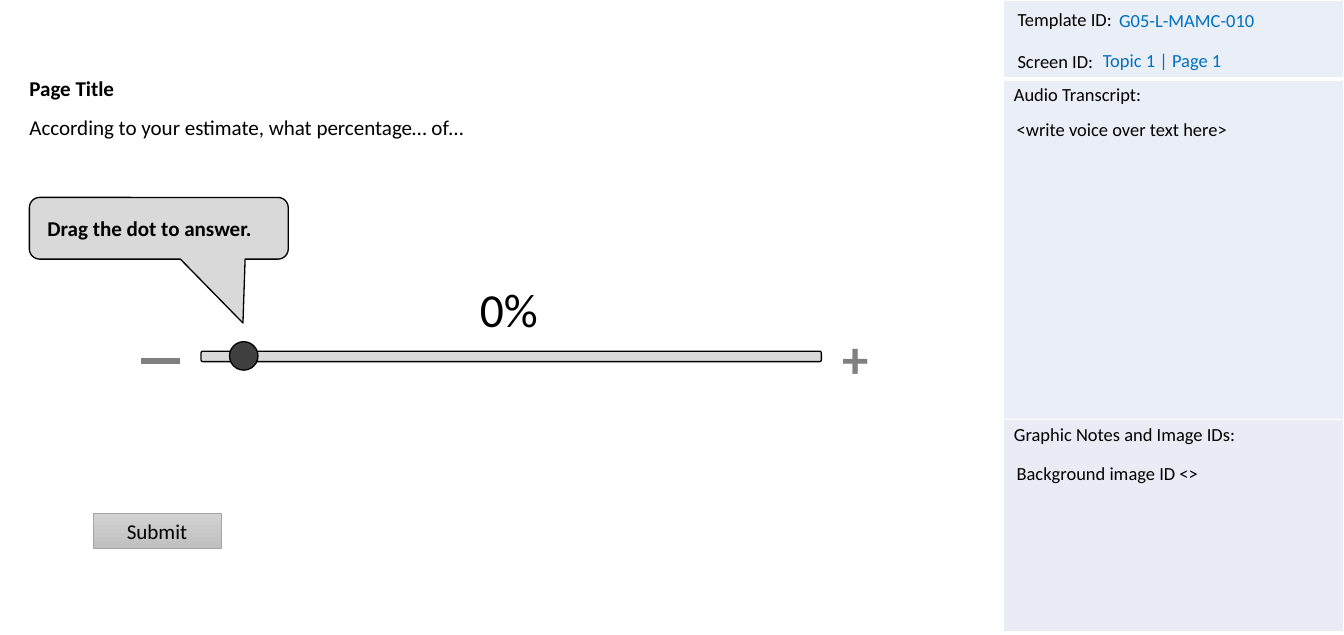
from dataclasses import dataclass

from lxml.etree import SubElement
from pptx import Presentation
from pptx.dml.color import RGBColor
from pptx.enum.shapes import MSO_CONNECTOR, MSO_SHAPE
from pptx.enum.text import MSO_ANCHOR, MSO_AUTO_SIZE, PP_ALIGN
from pptx.oxml.ns import qn
from pptx.util import Inches, Pt


@dataclass(frozen=True)
class Theme:
    """Hold the colours, type sizes and font of the slide."""
    font: str = "Calibri"
    small: int = 14
    base: int = 16
    value: int = 36
    sign: int = 40
    ink: str = "000000"
    link: str = "0070C0"
    grey: str = "808080"
    dot: str = "404040"
    pale: str = "D9D9D9"
    edge: str = "A5A5A5"
    white: str = "FFFFFF"
    panel: tuple = ("EAEFF7", "EAEFF7", "E9EBF5")
    button: tuple = ("D2D2D2", "C0C0C0")


THEME = Theme()


def rgb(code):
    """Turn a hex code into a colour."""
    return RGBColor.from_string(code)


def place(shape, box):
    """Move and size a shape to a box in inches."""
    shape.left, shape.top, shape.width, shape.height = map(Inches, box)


def pad(item, left, top, right, bottom):
    """Set the inner margins of a text frame or a cell."""
    item.margin_left, item.margin_top = Inches(left), Inches(top)
    item.margin_right, item.margin_bottom = Inches(right), Inches(bottom)


def write(frame, text, size, color=THEME.ink, bold=False, align=PP_ALIGN.LEFT):
    """Fill a text frame with one line and format it."""
    frame.text = text
    line = frame.paragraphs[0]
    line.alignment = align
    line.space_before = Pt(0)
    for run in line.runs:
        run.font.name = THEME.font
        run.font.size = Pt(size)
        run.font.bold = bold
        run.font.color.rgb = rgb(color)


def add_label(slide, text, box, size=THEME.small, color=THEME.ink, bold=False, flush=False):
    """Add a wrapped text box, flush with its edge if asked."""
    frame = slide.shapes.add_textbox(*map(Inches, box)).text_frame
    frame.word_wrap = True
    if flush:
        pad(frame, 0, 0, 0, 0)
    write(frame, text, size, color, bold)


def fill_holder(holder, text, box, bold=False):
    """Move a template placeholder and set its text without a bullet."""
    place(holder, box)
    frame = holder.text_frame
    frame.auto_size = MSO_AUTO_SIZE.NONE
    frame.vertical_anchor = MSO_ANCHOR.TOP
    pad(frame, 0, 0, 0, 0)
    write(frame, text, THEME.base, bold=bold)
    props = frame.paragraphs[0]._p.get_or_add_pPr()
    props.set("marL", "0")
    props.set("indent", "0")
    SubElement(props, qn("a:buNone"))


def add_form(slide, kind, box, fill, line=THEME.ink, width=1):
    """Add a preset shape with a flat fill and an outline."""
    shape = slide.shapes.add_shape(kind, *map(Inches, box))
    shape.shadow.inherit = False
    shape.fill.solid()
    shape.fill.fore_color.rgb = rgb(fill)
    shape.line.color.rgb = rgb(line)
    shape.line.width = Pt(width)
    return shape


def add_border(cell, side, width):
    """Draw one white border of a table cell."""
    line = SubElement(cell._tc.get_or_add_tcPr(), qn(f"a:ln{side}"), w=str(Pt(width)))
    fill = SubElement(line, qn("a:solidFill"))
    SubElement(fill, qn("a:srgbClr"), val=THEME.white)


def add_panel(slide):
    """Add the notes panel as a table of three rows."""
    heads = ("", "Audio Transcript:", "Graphic Notes and Image IDs:")
    highs = (0.83, 3.59, 2.23)
    box = map(Inches, (10.58, 0, 3.59, sum(highs)))
    table = slide.shapes.add_table(len(heads), 1, *box).table
    table.first_row = table.horz_banding = False
    for index, (head, high) in enumerate(zip(heads, highs)):
        table.rows[index].height = Inches(high)
        cell = table.cell(index, 0)
        for side in "LRTB":
            thick = (index, side) in ((0, "B"), (1, "T"))
            add_border(cell, side, 3 if thick else 1)
        cell.fill.solid()
        cell.fill.fore_color.rgb = rgb(THEME.panel[index])
        pad(cell, 0.11, 0.05, 0.11, 0.05)
        write(cell.text_frame, head, THEME.small)


def add_callout(slide):
    """Add the speech bubble that points at the dot."""
    shape = add_form(slide, MSO_SHAPE.ROUNDED_RECTANGULAR_CALLOUT,
                     (0.31, 2.08, 2.73, 0.65), THEME.pale)
    for index, value in enumerate((0.325, 1.536, 0.167)):
        shape.adjustments[index] = value
    pad(shape.text_frame, 0.16, 0.16, 0.31, 0.16)
    write(shape.text_frame, "Drag the dot to answer.", THEME.base, bold=True)


def add_slider(slide):
    """Add the track, the dot, the value and the two signs."""
    add_form(slide, MSO_SHAPE.FLOWCHART_ALTERNATE_PROCESS, (2.12, 3.7, 6.54, 0.11), THEME.pale)
    add_form(slide, MSO_SHAPE.OVAL, (2.42, 3.6, 0.3, 0.3), THEME.dot)
    ends = map(Inches, (1.49, 3.8, 1.9, 3.8))
    minus = slide.shapes.add_connector(MSO_CONNECTOR.STRAIGHT, *ends)
    minus.line.color.rgb = rgb(THEME.grey)
    minus.line.width = Pt(4.5)
    SubElement(minus._element.spPr, qn("a:effectLst"))
    add_label(slide, "+", (8.88, 3.43, 0.54, 0.74), THEME.sign, THEME.grey, True, True)
    add_label(slide, "0%", (5.06, 2.95, 1.24, 0.55), THEME.value, flush=True)


def add_button(slide, text, box):
    """Add a shaded button with centred text."""
    shape = add_form(slide, MSO_SHAPE.RECTANGLE, box, THEME.pale, THEME.edge, 0.5)
    shape.fill.gradient()
    shape.fill.gradient_angle = 270
    for stop, color in zip(shape.fill.gradient_stops, THEME.button):
        stop.color.rgb = rgb(color)
    pad(shape.text_frame, 0, 0.05, 0, 0.05)
    write(shape.text_frame, text, THEME.base, align=PP_ALIGN.CENTER)


def main():
    """Build the slide and save it."""
    deck = Presentation()
    deck.slide_width, deck.slide_height = Inches(14.17), Inches(6.69)
    slide = deck.slides.add_slide(deck.slide_layouts[1])
    title, body = slide.placeholders
    fill_holder(title, "Page Title", (0.31, 0.79, 1.54, 0.38), True)
    fill_holder(body, "According to your estimate, what percentage… of…",
                (0.31, 1.21, 10.1, 0.55))
    add_panel(slide)
    add_label(slide, "Template ID:", (10.63, 0.04, 1.3, 0.34))
    add_label(slide, "G05-L-MAMC-010", (11.7, 0.05, 2.47, 0.34), color=THEME.link)
    add_label(slide, "Screen ID:", (10.63, 0.48, 1.3, 0.34))
    add_label(slide, "Topic 1 | Page 1", (11.53, 0.47, 1.54, 0.34), color=THEME.link)
    add_label(slide, "<write voice over text here>", (10.62, 1.19, 3.55, 0.34))
    add_label(slide, "Background image ID <>", (10.62, 4.82, 3.55, 0.34))
    add_callout(slide)
    add_slider(slide)
    add_button(slide, "Submit", (0.98, 5.41, 1.35, 0.37))
    deck.save("out.pptx")


if __name__ == "__main__":
    main()
